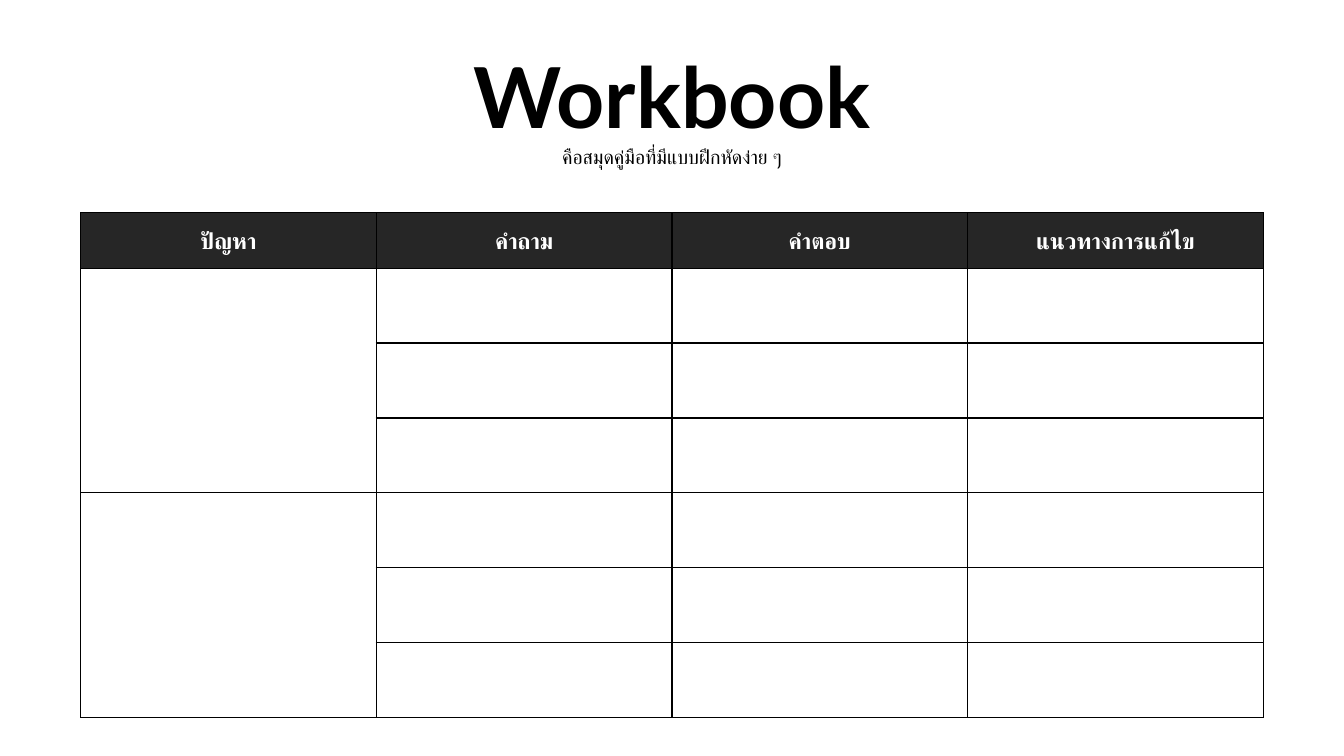
"""Build a workbook slide with a table of problems, questions, answers and solutions."""
from lxml.etree import SubElement
from pptx import Presentation
from pptx.dml.color import RGBColor
from pptx.enum.text import MSO_ANCHOR as Anchor, MSO_AUTO_SIZE as AutoSize, PP_ALIGN as Align
from pptx.oxml.ns import qn
from pptx.util import Inches, Pt

COLOURS = {"ink": "000000", "header": "262626", "paper": "FFFFFF"}
FONT = "Lato"
HEADINGS = ["ปัญหา", "คำถาม", "คำตอบ", "แนวทางการแก้ไข"]
GROUPS, QUESTIONS = 2, 3
TABLE_WIDTH, TABLE_HEIGHT, HEADER_HEIGHT = 11.73, 5.01, 0.55


def style_paragraph(para, size, colour, bold):
    para.alignment = Align.CENTER
    font = para.font
    font.size, font.bold, font.name = Pt(size), bold, FONT
    font.color.rgb = RGBColor.from_string(COLOURS[colour])
    properties = para._p.pPr.find(qn("a:defRPr"))
    SubElement(properties, qn("a:cs"), typeface=FONT)


def add_borders(cell):
    properties = cell._tc.get_or_add_tcPr()
    for side in ("lnL", "lnR", "lnT", "lnB"):
        line = SubElement(properties, qn(f"a:{side}"), w=str(Pt(1)))
        fill = SubElement(line, qn("a:solidFill"))
        SubElement(fill, qn("a:srgbClr"), val=COLOURS["ink"])


deck = Presentation()
deck.slide_width, deck.slide_height = Inches(13.33), Inches(7.5)
page = deck.slides.add_slide(deck.slide_layouts[5])

title = page.shapes.title
title.left, title.top = Inches(0), Inches(0.39)
title.width, title.height = Inches(13.33), Inches(1.35)
frame = title.text_frame
frame.word_wrap = True
frame.auto_size = AutoSize.SHAPE_TO_FIT_TEXT
frame.vertical_anchor = Anchor.TOP
frame.text = "Workbook\nคือสมุดคู่มือที่มีแบบฝึกหัดง่าย ๆ"
style_paragraph(frame.paragraphs[0], 60, "ink", True)
style_paragraph(frame.paragraphs[1], 14, "ink", False)

row_count = 1 + GROUPS * QUESTIONS
table = page.shapes.add_table(
    row_count, len(HEADINGS), Inches(0.8), Inches(2.11), Inches(TABLE_WIDTH), Inches(TABLE_HEIGHT)
).table
table.horz_banding = False
for column in table.columns:
    column.width = Inches(TABLE_WIDTH / len(HEADINGS))
for row in table.rows:
    row.height = Inches((TABLE_HEIGHT - HEADER_HEIGHT) / (row_count - 1))
table.rows[0].height = Inches(HEADER_HEIGHT)

for cell in table.iter_cells():
    add_borders(cell)
    cell.fill.background()

for column_index, heading in enumerate(HEADINGS):
    cell = table.cell(0, column_index)
    cell.text = heading
    cell.vertical_anchor = Anchor.MIDDLE
    cell.fill.solid()
    cell.fill.fore_color.rgb = RGBColor.from_string(COLOURS["header"])
    style_paragraph(cell.text_frame.paragraphs[0], 16, "paper", True)

for first_row in range(1, row_count, QUESTIONS):
    table.cell(first_row, 0).merge(table.cell(first_row + QUESTIONS - 1, 0))

deck.save("out.pptx")
